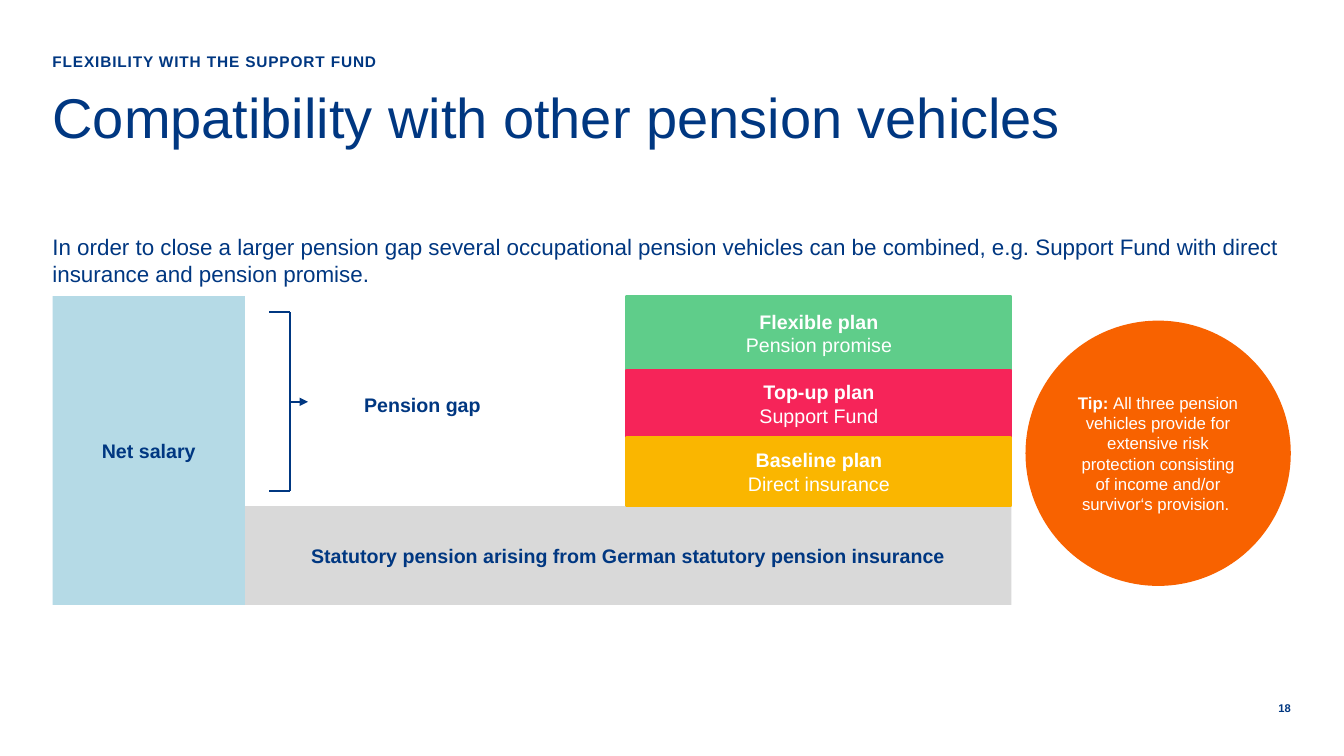
from lxml.etree import SubElement
from pptx import Presentation
from pptx.dml.color import RGBColor
from pptx.enum.shapes import MSO_CONNECTOR, MSO_SHAPE
from pptx.enum.text import MSO_ANCHOR, MSO_AUTO_SIZE, PP_ALIGN
from pptx.oxml.ns import qn
from pptx.util import Pt

COLORS = {
    "navy": "003781",
    "white": "FFFFFF",
    "sky": "B5DAE6",
    "gray": "D9D9D9",
    "yellow": "FAB600",
    "red": "F62459",
    "green": "5FCD8A",
    "orange": "F86200",
}

PILLARS = [
    ("Flexible plan", "Pension promise", "green", 53),
    ("Top-up plan", "Support Fund", "red", 48),
    ("Baseline plan", "Direct insurance", "yellow", 49),
]


def rgb(name):
    return RGBColor.from_string(COLORS[name])


def style_run(r, size, color, bold):
    r.font.name = "Arial"
    r.font.size = Pt(size)
    r.font.bold = bold
    r.font.color.rgb = rgb(color)


def format_text(tf, size, color, bolds, align):
    tf.word_wrap = True
    p = tf.paragraphs[0]
    p.alignment = align
    for r, bold in zip(p.runs, bolds):
        style_run(r, size, color, bold)


def clear_insets(tf, anchor=MSO_ANCHOR.TOP):
    tf.auto_size = MSO_AUTO_SIZE.NONE
    tf.margin_left = tf.margin_right = tf.margin_top = tf.margin_bottom = 0
    tf.vertical_anchor = anchor


def add_label(s, box, text, size, bold=False, align=PP_ALIGN.LEFT, anchor=MSO_ANCHOR.TOP):
    tf = s.shapes.add_textbox(*map(Pt, box)).text_frame
    clear_insets(tf, anchor)
    tf.text = text
    format_text(tf, size, "navy", [bold], align)
    return tf.paragraphs[0]


def add_block(s, kind, box, fill, outlined=False):
    sp = s.shapes.add_shape(kind, *map(Pt, box))
    sp.shadow.inherit = False
    sp.fill.solid()
    sp.fill.fore_color.rgb = rgb(fill)
    if outlined:
        sp.line.color.rgb = rgb(fill)
        sp.line.width = Pt(1.5)
    else:
        sp.line.fill.background()
    sp.text_frame.vertical_anchor = MSO_ANCHOR.MIDDLE
    return sp.text_frame


def add_line(s, x1, y1, x2, y2, arrow=False):
    line = s.shapes.add_connector(MSO_CONNECTOR.STRAIGHT, *map(Pt, (x1, y1, x2, y2)))
    line.line.color.rgb = rgb("navy")
    line.line.width = Pt(1.5)
    if arrow:
        SubElement(line.line._get_or_add_ln(), qn("a:tailEnd"), type="triangle")
    SubElement(line._element.spPr, qn("a:effectLst"))


def add_header(s, x, y, w):
    title = s.shapes.title
    title.left, title.top, title.width, title.height = map(Pt, (x, y + 31.5, w, 73.5))
    tf = title.text_frame
    clear_insets(tf)
    tf.text = "Compatibility with other pension vehicles"
    format_text(tf, 40, "navy", [False], PP_ALIGN.LEFT)
    tf.paragraphs[0].line_spacing = Pt(38)
    p = add_label(s, (x, y, w, 20), "FLEXIBILITY WITH THE SUPPORT FUND", 11, True)
    p.runs[0].font._element.set("spc", "60")


def add_pillars(s, x, y, w):
    for name, vehicle, fill, h in PILLARS:
        tf = add_block(s, MSO_SHAPE.RECTANGLE, (x, y, w, h), fill, True)
        tf.text = f"{name}\v{vehicle}"
        format_text(tf, 14, "white", [True, False], PP_ALIGN.CENTER)
        y += h


def add_gap(s, x, y, w, h):
    spine, middle = x + 14.5, y + h / 2
    add_line(s, x, y, spine, y)
    add_line(s, x, y + h, spine, y + h)
    add_line(s, spine, y, spine, y + h)
    add_line(s, spine, middle, spine + 13, middle, True)
    add_label(s, (x + 21, middle - 6.5, w, 12.5), "Pension gap", 14, True, PP_ALIGN.CENTER)


def add_diagram(s, x, y, w, h):
    salary_w, pillar_w = 137.5, 275
    pillars_h = sum(pillar[-1] for pillar in PILLARS)
    blocks = [
        ("Net salary", "sky", (x, y, salary_w, h)),
        ("Statutory pension arising from German statutory pension insurance", "gray",
         (x + salary_w, y + pillars_h, w - salary_w, h - pillars_h)),
    ]
    for text, fill, box in blocks:
        tf = add_block(s, MSO_SHAPE.RECTANGLE, box, fill)
        tf.text = text
        format_text(tf, 14, "navy", [True], PP_ALIGN.CENTER)
    add_pillars(s, x + w - pillar_w, y, pillar_w)
    add_gap(s, x + salary_w + 17.5, y + 11.5, 176.5, 128)


def add_tip(s, x, y, size):
    tf = add_block(s, MSO_SHAPE.OVAL, (x, y, size, size), "orange")
    p = tf.paragraphs[0]
    for text in ("Tip: ", "All three pension vehicles provide for extensive risk "
                 "protection consisting of income and/or survivor‘s provision. "):
        p.add_run().text = text
    format_text(tf, 12, "white", [True, False], PP_ALIGN.CENTER)


def main():
    prs = Presentation()
    prs.slide_width, prs.slide_height = Pt(960), Pt(540)
    s = prs.slides.add_slide(prs.slide_layouts[5])
    left = 37.5
    add_header(s, left, 37.5, 734.5)
    add_label(s, (left, 166.5, 884, 40.5),
              "In order to close a larger pension gap several occupational pension vehicles "
              "can be combined, e.g. Support Fund with direct insurance and pension promise.", 16)
    add_tip(s, 732.5, 229, 189.5)
    add_diagram(s, left, 211.5, 685, 220.5)
    number = add_label(s, (901, 499.5, 21, 11.5), "18", 8, True, PP_ALIGN.RIGHT, MSO_ANCHOR.MIDDLE)
    number.line_spacing = Pt(10)
    prs.save("out.pptx")


if __name__ == "__main__":
    main()
